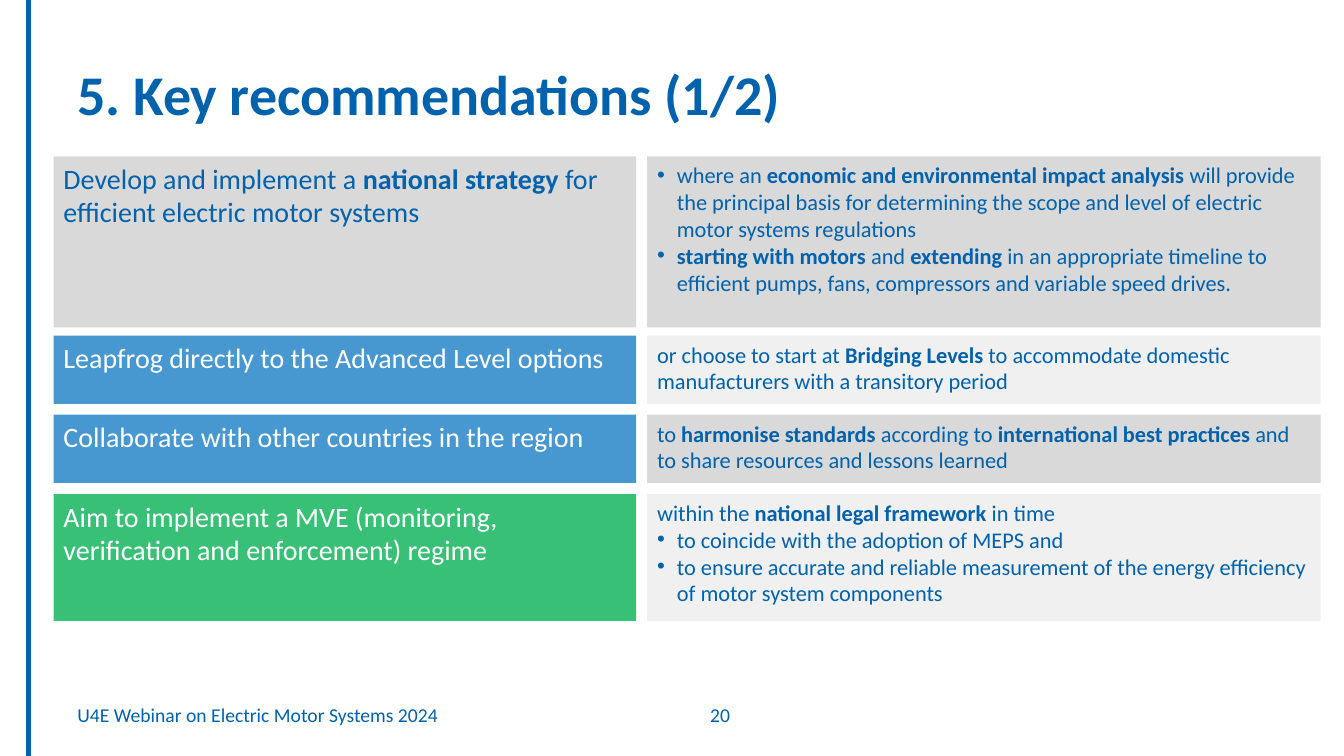
from lxml import etree
from pptx import Presentation, util as u
from pptx.dml import color
from pptx.enum import shapes, text
from pptx.oxml import ns

Cm, Pt = u.Cm, u.Pt
COLOURS = {"brand": "0061AD", "white": "FFFFFF", "grey": "D9D9D9",
           "blue": "0070C0", "green": "00B050"}


def write(frame, paragraphs, size, colour, align=text.PP_ALIGN.LEFT):
    """Fill a frame: '• ' starts a bulleted paragraph, '**' switches bold."""
    frame.word_wrap = True
    for index, wording in enumerate(paragraphs):
        para = frame.paragraphs[0] if index == 0 else frame.add_paragraph()
        para.alignment = align
        if wording.startswith("• "):
            wording = wording[2:]
            props = para._p.get_or_add_pPr()
            props.set("marL", str(Cm(0.5)))
            props.set("indent", str(-Cm(0.5)))
            etree.SubElement(props, ns.qn("a:buFont"), typeface="Arial")
            etree.SubElement(props, ns.qn("a:buChar"), char="•")
        for part, words in enumerate(wording.split("**")):
            if words:
                span = para.add_run()
                span.text = words
                span.font.name = "Calibri"
                span.font.size = Pt(size)
                span.font.bold = part % 2 == 1
                span.font.color.rgb = color.RGBColor.from_string(COLOURS[colour])


def add_panel(page, left, top, width, height, fill, opacity):
    """Draw a borderless rectangle whose text starts at the top."""
    box = page.shapes.add_shape(shapes.MSO_SHAPE.RECTANGLE,
                                Cm(left), Cm(top), Cm(width), Cm(height))
    box.shadow.inherit = False
    box.line.fill.background()
    box.fill.solid()
    box.fill.fore_color.rgb = color.RGBColor.from_string(COLOURS[fill])
    if opacity < 100:
        rgb = box._element.spPr.find(".//" + ns.qn("a:srgbClr"))
        etree.SubElement(rgb, ns.qn("a:alpha"), val=str(opacity * 1000))
    box.text_frame.vertical_anchor = text.MSO_ANCHOR.TOP
    return box.text_frame


# Page
deck = Presentation()
deck.slide_width, deck.slide_height = Cm(33.87), Cm(19.05)
page = deck.slides.add_slide(deck.slide_layouts[5])

# Vertical rule at the left edge
rule = page.shapes.add_connector(shapes.MSO_CONNECTOR.STRAIGHT,
                                 Cm(0.71), 0, Cm(0.71), deck.slide_height)
rule.line.color.rgb = color.RGBColor.from_string(COLOURS["brand"])
rule.line.width = Pt(3.75)
etree.SubElement(rule._element.spPr, ns.qn("a:effectLst"))

# Title
title = page.shapes.title
title.left, title.top, title.width, title.height = Cm(1.7), Cm(0.76), Cm(30.48), Cm(3.18)
title.text_frame.vertical_anchor = text.MSO_ANCHOR.MIDDLE
write(title.text_frame, ["**5. Key recommendations (1/2)**"], 40, "brand")

# Recommendations: top, height, (fill, opacity, text colour, text), (fill, opacity, text)
recommendations = [
    (3.94, 4.31,
     ("grey", 100, "brand",
      "Develop and implement a **national strategy **for efficient electric motor systems"),
     ("grey", 100, [
         "• where an **economic and environmental impact analysis **will provide the principal "
         "basis for determining the scope and level of electric motor systems regulations",
         "• **starting with motors **and **extending** in an appropriate timeline to efficient "
         "pumps, fans, compressors and variable speed drives."])),
    (8.46, 1.72,
     ("blue", 72, "white", "Leapfrog directly to the Advanced Level options"),
     ("grey", 37, ["or choose to start at **Bridging Levels **to accommodate domestic "
                   "manufacturers with a transitory period"])),
    (10.45, 1.72,
     ("blue", 72, "white", "Collaborate with other countries in the region"),
     ("grey", 100, ["to **harmonise standards **according to **international best practices "
                    "**and to share resources and lessons learned"])),
    (12.45, 3.2,
     ("green", 78, "white",
      "Aim to implement a MVE (monitoring, verification and enforcement) regime"),
     ("grey", 37, [
         "within the **national legal framework **in time",
         "• to coincide with the adoption of MEPS and",
         "• to ensure accurate and reliable measurement of the energy efficiency of motor "
         "system components"])),
]
for top, height, action, detail in recommendations:
    fill, opacity, ink, wording = action
    write(add_panel(page, 1.35, top, 14.68, height, fill, opacity), [wording], 20, ink)
    fill, opacity, paragraphs = detail
    write(add_panel(page, 16.31, top, 16.97, height, fill, opacity), paragraphs, 16, "brand")

# Footer and page number
for left, width, wording, align in [
    (1.7, 10.72, "U4E Webinar on Electric Motor Systems 2024", text.PP_ALIGN.LEFT),
    (14.2, 7.9, "20", text.PP_ALIGN.CENTER),
]:
    box = page.shapes.add_textbox(Cm(left), Cm(17.35), Cm(width), Cm(1.32))
    box.text_frame.vertical_anchor = text.MSO_ANCHOR.MIDDLE
    write(box.text_frame, [wording], 14, "brand", align)

deck.save("out.pptx")
